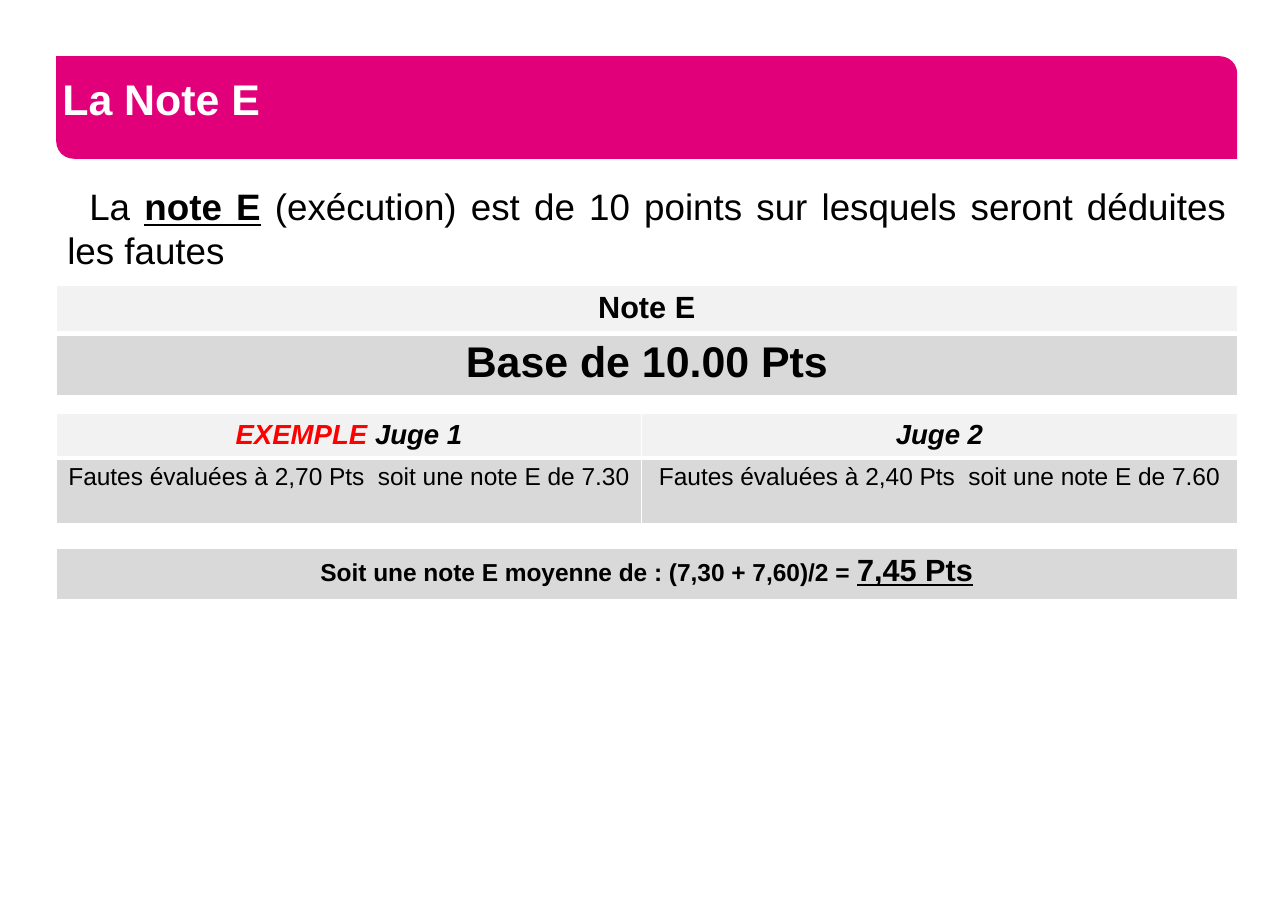
from lxml.etree import SubElement
from pptx import Presentation
from pptx.dml.color import RGBColor
from pptx.enum.shapes import MSO_SHAPE as Shape
from pptx.enum.text import MSO_ANCHOR as Anchor, PP_ALIGN as Align
from pptx.oxml.ns import qn
from pptx.util import Inches, Pt

COLORS = {
    "pink": "E2007A",
    "white": "FFFFFF",
    "black": "000000",
    "red": "FF0000",
    "light": "F2F2F2",
    "gray": "D9D9D9",
}
LEFT, WIDTH, MARGIN = 0.51, 10.71, 0.05


def color(name):
    """Return the named colour."""
    return RGBColor.from_string(COLORS[name])


def add_text(paragraph, text, size=16, ink="black", bold=False, italic=False, underline=False):
    """Add one formatted run to a paragraph."""
    run = paragraph.add_run()
    run.text = text
    font = run.font
    font.name, font.size = "Arial", Pt(size)
    font.bold, font.italic, font.underline = bold, italic, underline
    font.color.rgb = color(ink)


def set_margins(box):
    """Give a text frame or a cell the same narrow margin on each side."""
    box.margin_left = box.margin_right = Inches(MARGIN)
    box.margin_top = box.margin_bottom = Inches(MARGIN)


def add_banner(slide, title):
    """Draw the title banner with two rounded corners."""
    banner = slide.shapes.add_shape(
        Shape.ROUND_2_DIAG_RECTANGLE, Inches(LEFT), Inches(0.51), Inches(WIDTH), Inches(0.93))
    banner.adjustments[0], banner.adjustments[1] = 0, 0.17
    banner.shadow.inherit = False
    banner.fill.solid()
    banner.fill.fore_color.rgb = color("pink")
    banner.line.fill.background()
    frame = banner.text_frame
    set_margins(frame)
    frame.margin_left = Inches(0.01)
    frame.vertical_anchor = Anchor.MIDDLE
    paragraph = frame.paragraphs[0]
    paragraph.alignment = Align.LEFT
    paragraph.line_spacing = Pt(22)
    add_text(paragraph, title, size=28, ink="white", bold=True)


def add_intro(slide):
    """Write the justified sentence that defines the note."""
    box = slide.shapes.add_textbox(Inches(0.56), Inches(1.62), Inches(10.61), Inches(0.87))
    frame = box.text_frame
    frame.word_wrap = True
    set_margins(frame)
    paragraph = frame.paragraphs[0]
    paragraph.alignment = Align.JUSTIFY
    properties = paragraph._p.get_or_add_pPr()
    properties.set("marL", "0")
    properties.set("indent", str(Inches(0.2)))
    add_text(paragraph, "La ", size=24)
    add_text(paragraph, "note E", size=24, bold=True, underline=True)
    add_text(paragraph, " (exécution) est de 10 points sur lesquels seront déduites les fautes",
             size=24)


def set_borders(cell, top, bottom):
    """Draw white borders around a cell, with widths in points."""
    properties = cell._tc.get_or_add_tcPr()
    for side, width in (("L", 1), ("R", 1), ("T", top), ("B", bottom)):
        line = SubElement(properties, qn(f"a:ln{side}"), w=str(Pt(width)))
        fill = SubElement(line, qn("a:solidFill"))
        SubElement(fill, qn("a:srgbClr"), val=COLORS["white"])


def add_score_table(slide, top, columns, heights, fills, rows):
    """Add a table whose cells are lists of (text, format) runs."""
    table = slide.shapes.add_table(
        len(heights), len(columns), Inches(LEFT), Inches(top),
        Inches(WIDTH), Inches(sum(heights))).table
    table.first_row = table.horz_banding = False
    for column, width in zip(table.columns, columns):
        column.width = Inches(width)
    for index, (row, height, fill, contents) in enumerate(zip(table.rows, heights, fills, rows)):
        row.height = Inches(height)
        for cell, runs in zip(row.cells, contents):
            set_margins(cell)
            set_borders(cell, top=3 if index else 1, bottom=1 if index else 3)
            cell.fill.solid()
            cell.fill.fore_color.rgb = color(fill)
            paragraph = cell.text_frame.paragraphs[0]
            paragraph.alignment = Align.CENTER
            for text, style in runs:
                add_text(paragraph, text, **style)


def main():
    """Build the slide and save it."""
    presentation = Presentation()
    presentation.slide_width, presentation.slide_height = Inches(11.68), Inches(8.26)
    slide = presentation.slides.add_slide(presentation.slide_layouts[6])
    add_banner(slide, "La Note E")
    add_intro(slide)

    header_fills = ["light", "gray"]
    add_score_table(slide, 2.59, [WIDTH], [0.33, 0.38], header_fills, [
        [[("Note E", dict(size=20, bold=True))]],
        [[("Base de 10.00 Pts", dict(size=28, bold=True))]],
    ])
    judge = dict(size=18, bold=True, italic=True)
    scores = [("2,70", "7.30"), ("2,40", "7.60")]
    add_score_table(slide, 3.75, [5.31, 5.4], [0.39, 0.6], header_fills, [
        [[("EXEMPLE ", dict(judge, ink="red")), ("Juge 1", judge)], [("Juge 2", judge)]],
        [[(f"Fautes évaluées à {faults} Pts  soit une note E de {note}", {})]
         for faults, note in scores],
    ])
    add_score_table(slide, 4.97, [WIDTH], [0.48], ["gray"], [
        [[("Soit une note E moyenne de : (7,30 + 7,60)/2 = ", dict(bold=True)),
          ("7,45 Pts", dict(size=20, bold=True, underline=True))]],
    ])
    presentation.save("out.pptx")


if __name__ == "__main__":
    main()
